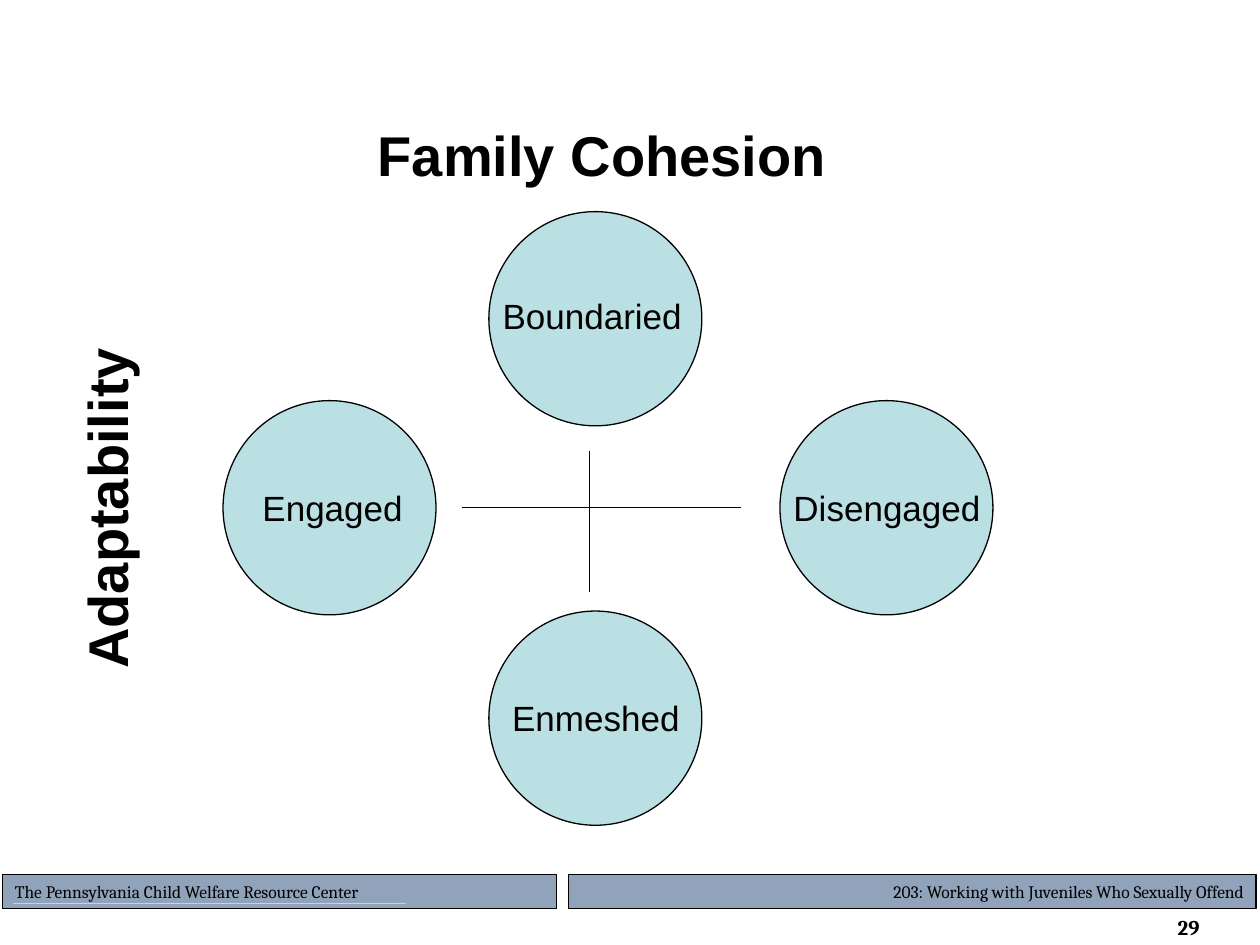
from lxml import etree
from pptx import Presentation
from pptx.dml.color import RGBColor
from pptx.enum.shapes import MSO_CONNECTOR as LINE, MSO_SHAPE as SHAPE
from pptx.enum.text import MSO_ANCHOR as ANCHOR, PP_ALIGN as ALIGN
from pptx.oxml.ns import qn
from pptx.util import Inches, Pt

COLORS = {name: RGBColor.from_string(value) for name, value in {
    "black": "000000", "bar": "91A3BB", "rule": "E5D199", "circle": "BBE0E3",
}.items()}
FORMATS = {
    "heading": {"name": "Arial", "size": Pt(32), "bold": True},
    "label": {"name": "Arial", "size": Pt(20), "bold": False},
    "footer": {"name": "Cambria", "size": Pt(10), "bold": False},
    "number": {"name": "Cambria", "size": Pt(12), "bold": True},
}

deck = Presentation()
deck.slide_width, deck.slide_height = Inches(10), Inches(7.5)
page = deck.slides.add_slide(deck.slide_layouts[6])


def write(box, text, style, align=ALIGN.LEFT, anchor=ANCHOR.TOP):
    frame = box.text_frame
    frame.word_wrap = True
    frame.vertical_anchor = anchor
    para = frame.paragraphs[0]
    para.alignment = align
    span = para.add_run()
    span.text = text
    for key, value in FORMATS[style].items():
        setattr(span.font, key, value)
    span.font.color.rgb = COLORS["black"]


def add_filled(kind, area, fill, line_width=0.75):
    shape = page.shapes.add_shape(kind, *map(Inches, area))
    shape.shadow.inherit = False
    shape.fill.solid()
    shape.fill.fore_color.rgb = COLORS[fill]
    shape.line.color.rgb = COLORS["black"]
    shape.line.width = Pt(line_width)
    return shape


# Footer bars
for text, left, width, line_width, align in [
    ("203: Working with Juveniles Who Sexually Offend", 4.51, 5.46, 0.75, ALIGN.RIGHT),
    ("The Pennsylvania Child Welfare Resource Center", 0.02, 4.4, 0.5, ALIGN.LEFT),
]:
    bar = add_filled(SHAPE.RECTANGLE, (left, 6.94, width, 0.27), "bar", line_width)
    write(bar, text, "footer", align)

# Page number
number = page.shapes.add_textbox(Inches(8.81), Inches(7.21), Inches(0.95), Inches(0.3))
number.text_frame.margin_right = Inches(0.24)
write(number, "29", "number", ALIGN.RIGHT)

# Axis headings
for text, left, top, width, angle, align in [
    ("Family Cohesion", 2.9, 0.92, 3.95, 0, ALIGN.LEFT),
    ("Adaptability", -0.94, 3.73, 3.56, 270, ALIGN.CENTER),
]:
    heading = page.shapes.add_textbox(Inches(left), Inches(top), Inches(width), Inches(0.61))
    heading.rotation = angle
    write(heading, text, "heading", align, ANCHOR.MIDDLE)

# Circles, each with its label box on top
for text, left, top, label_left, label_top, align in [
    ("Boundaried", 3.88, 1.68, 3.89, 2.29, ALIGN.LEFT),
    ("Engaged", 1.77, 3.18, 1.79, 3.81, ALIGN.CENTER),
    ("Enmeshed", 3.88, 4.85, 3.88, 5.48, ALIGN.CENTER),
    ("Disengaged", 6.19, 3.18, 6.19, 3.81, ALIGN.CENTER),
]:
    add_filled(SHAPE.OVAL, (left, top, 1.69, 1.7), "circle")
    label = page.shapes.add_textbox(
        Inches(label_left), Inches(label_top), Inches(1.7), Inches(0.44))
    write(label, text, "label", align)

# Footer rule and the cross between the circles
for color, *ends in [
    ("rule", 0.1, 7.17, 3.22, 7.17),
    ("black", 4.68, 3.58, 4.68, 4.7),
    ("black", 3.67, 4.03, 5.88, 4.03),
]:
    rule = page.shapes.add_connector(LINE.STRAIGHT, *map(Inches, ends))
    rule.line.color.rgb = COLORS[color]
    rule.line.width = Pt(0.75)
    etree.SubElement(rule.element.spPr, qn("a:effectLst"))

deck.save("out.pptx")
